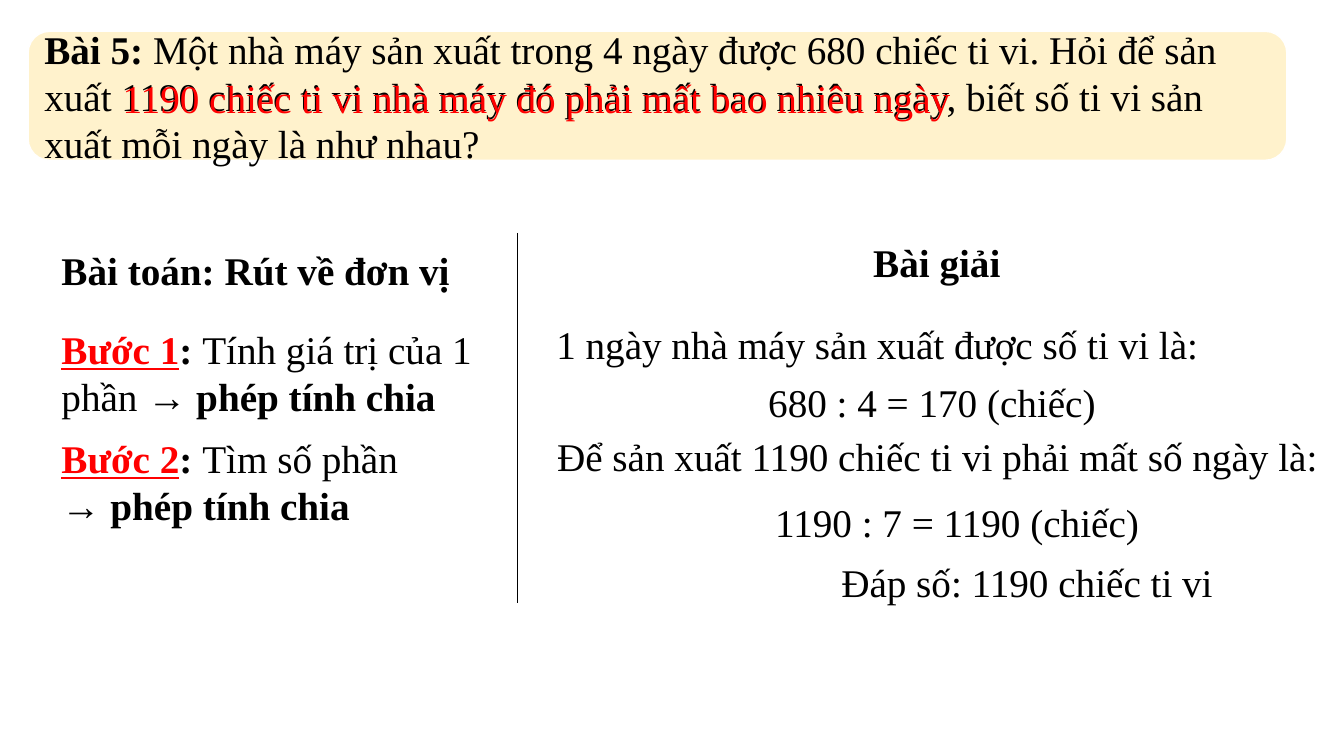
from lxml import etree
from pptx import Presentation
from pptx.dml.color import RGBColor
from pptx.enum import shapes, text
from pptx.oxml import ns
from pptx.util import Cm, Pt

COLORS = {"ink": "000000", "accent": "FF0000", "card": "FFF2CC", "edge": "FFFFFF"}
FONT = "Times New Roman"
LINE_HEIGHT = 1.45
STEP_HEIGHT = 2.64
LEFT_COLUMN = 1.3
DIVIDER_X = 13.03
COLUMN_TOP = 5.87


def color(name):
    return RGBColor.from_string(COLORS[name])


def add_run(paragraph, wording, bold=False, underline=False, ink="ink"):
    run = paragraph.add_run()
    run.text = wording
    run.font.name = FONT
    run.font.size = Pt(28)
    run.font.bold = bold
    run.font.underline = underline
    run.font.color.rgb = color(ink)


def add_label(slide, left, top, width, height=LINE_HEIGHT, runs=(), centered=False, wrap=True):
    label = slide.shapes.add_textbox(Cm(left), Cm(top), Cm(width), Cm(height))
    frame = label.text_frame
    frame.word_wrap = wrap
    frame.auto_size = text.MSO_AUTO_SIZE.SHAPE_TO_FIT_TEXT
    paragraph = frame.paragraphs[0]
    paragraph.alignment = text.PP_ALIGN.CENTER if centered else text.PP_ALIGN.LEFT
    for wording, style in runs:
        add_run(paragraph, wording, **style)


def add_problem(slide):
    card = slide.shapes.add_shape(
        shapes.MSO_SHAPE.ROUNDED_RECTANGLE, Cm(0.71), Cm(0.79), Cm(31.72), Cm(3.25))
    card.shadow.inherit = False
    card.fill.solid()
    card.fill.fore_color.rgb = color("card")
    card.line.color.rgb = color("edge")
    card.line.width = Pt(1)
    frame = card.text_frame
    frame.word_wrap = True
    frame.vertical_anchor = text.MSO_ANCHOR.MIDDLE
    problem = frame.paragraphs[0]
    problem.alignment = text.PP_ALIGN.LEFT
    add_run(problem, "Bài 5: ", bold=True)
    add_run(problem, "Một nhà máy sản xuất trong 4 ngày được 680 chiếc ti vi. "
                     "Hỏi để sản xuất 1190 chiếc ti vi nhà máy đó phải mất bao nhiêu ngày, "
                     "biết số ti vi sản xuất mỗi ngày là như nhau?")


def add_step(slide, top, width, name, task):
    add_label(slide, LEFT_COLUMN, top, width, STEP_HEIGHT, runs=[
        (name, {"bold": True, "underline": True, "ink": "accent"}),
        (": ", {"bold": True}),
        (task, {}),
        ("→ phép tính chia", {"bold": True}),
    ])


def add_divider(slide):
    divider = slide.shapes.add_connector(
        shapes.MSO_CONNECTOR.STRAIGHT, Cm(DIVIDER_X), Cm(COLUMN_TOP), Cm(DIVIDER_X), Cm(15.19))
    divider.line.color.rgb = color("ink")
    divider.line.width = Pt(0.5)
    etree.SubElement(divider._element.spPr, ns.qn("a:effectLst"))


def add_solution(slide):
    add_label(slide, 18.62, COLUMN_TOP, 9.98, runs=[("Bài giải", {"bold": True})], centered=True)
    solution = [
        (13.77, 7.95, 17.27, "1 ngày nhà máy sản xuất được số ti vi là:", False, True),
        (16.08, 9.4, 15.06, "680 : 4 = 170 (chiếc) ", True, True),
        (13.79, 10.77, 20.09, "Để sản xuất 1190 chiếc ti vi phải mất số ngày là:", False, True),
        (16.59, 12.42, 15.06, "1190 : 7 = 1190 (chiếc)", True, True),
        (20.9, 13.94, 10.21, "Đáp số: 1190 chiếc ti vi ", True, False),
    ]
    for left, top, width, wording, centered, wrap in solution:
        add_label(slide, left, top, width, runs=[(wording, {})], centered=centered, wrap=wrap)


def main():
    deck = Presentation()
    deck.slide_width, deck.slide_height = Cm(33.87), Cm(19.05)
    slide = deck.slides.add_slide(deck.slide_layouts[6])
    add_problem(slide)
    add_label(slide, LEFT_COLUMN, 6.07, 13.08,
              runs=[("Bài toán: Rút về đơn vị", {"bold": True})])
    add_step(slide, 8.08, 11.76, "Bước 1", "Tính giá trị của 1 phần ")
    add_step(slide, 10.82, 9.5, "Bước 2", "Tìm số phần ")
    add_solution(slide)
    add_divider(slide)
    question = "1190 chiếc ti vi nhà máy đó phải mất bao nhiêu ngày"
    add_label(slide, 2.84, 1.75, 22.2, runs=[(question, {"ink": "accent"})], wrap=False)
    deck.save("out.pptx")


if __name__ == "__main__":
    main()
